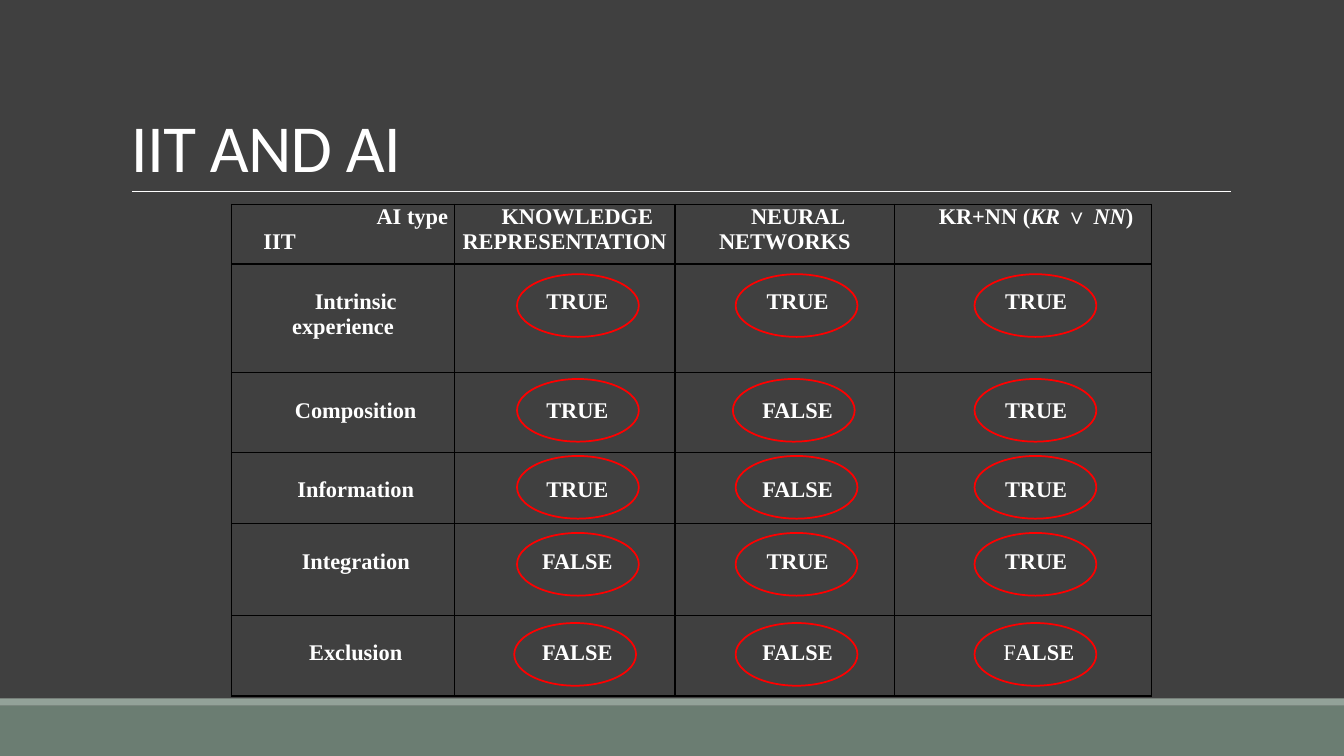
from dataclasses import dataclass
from itertools import product
from typing import NamedTuple

from lxml.etree import SubElement
from pptx import Presentation
from pptx.dml.color import RGBColor
from pptx.enum.shapes import MSO_CONNECTOR as Connector, MSO_SHAPE as Shape
from pptx.enum.text import MSO_ANCHOR as Anchor, PP_ALIGN as Align
from pptx.oxml import parse_xml
from pptx.oxml.ns import nsdecls, qn
from pptx.util import Cm, Pt


@dataclass(frozen=True)
class Theme:
    background: str = "404040"
    footer: str = "6B7D72"
    stripe: str = "93A299"
    text: str = "FFFFFF"
    border: str = "000000"
    ring: str = "FF0000"
    title_font: str = "Calibri"
    table_font: str = "Times New Roman"
    title_size: float = 48
    table_size: float = 16


class Span(NamedTuple):
    text: str
    bold: bool = True
    italic: bool = False


class Line(NamedTuple):
    spans: list[Span]
    align: Align = Align.CENTER


class Property(NamedTuple):
    name: str
    height: float
    ring_top: float
    verdicts: list[list[Span]]


class Band(NamedTuple):
    top: float
    height: float
    color: str


THEME = Theme()
WIDTH, HEIGHT = 33.87, 19.05
TABLE_LEFT, TABLE_TOP, HEADER_HEIGHT = 5.84, 5.15, 1.5
COLUMN_WIDTHS = [5.61, 5.56, 5.54, 6.48]
CELL_INSET, FIRST_INDENT, BLANK_LINE = 0.16, 0.64, 0.64
RING_LEFTS, RING_WIDTH, RING_HEIGHT = [13.03, 18.54, 24.56], 3.07, 1.58
RING_SHIFTS = {("Composition", 1): -0.07, ("Exclusion", 0): -0.07}
BANDS = [Band(17.78, 1.27, THEME.footer), Band(17.6, 0.18, THEME.stripe)]
TRUE, FALSE = [Span("TRUE")], [Span("FALSE")]

HEADERS = [
    [Line([Span("AI type")], Align.RIGHT), Line([Span("IIT")], Align.LEFT)],
    [Line([Span("KNOWLEDGE REPRESENTATION")])],
    [Line([Span("NEURAL NETWORKS")])],
    [Line([Span("KR+NN ("), Span("KR ", italic=True), Span("∨ "),
           Span("NN", italic=True), Span(")")])],
]
PROPERTIES = [
    Property("Intrinsic experience", 2.74, 6.91, [TRUE, TRUE, TRUE]),
    Property("Composition", 2.01, 9.55, [TRUE, FALSE, TRUE]),
    Property("Information", 1.8, 11.49, [TRUE, FALSE, TRUE]),
    Property("Integration", 2.31, 13.43, [FALSE, TRUE, TRUE]),
    Property("Exclusion", 2.03, 15.7,
             [FALSE, FALSE, [Span(" F", bold=False), Span("ALSE")]]),
]


def rgb(color: str) -> RGBColor:
    """Turn a hex string into a colour."""
    return RGBColor.from_string(color)


def style_run(r, font: str, size: float) -> None:
    """Set the font, size and colour of a run."""
    r.font.name, r.font.size = font, Pt(size)
    r.font.color.rgb = rgb(THEME.text)


def add_band(s, band: Band) -> None:
    """Draw a full-width band at the foot of the slide."""
    sp = s.shapes.add_shape(Shape.RECTANGLE, 0, Cm(band.top), Cm(WIDTH), Cm(band.height))
    sp.shadow.inherit = False
    sp.fill.solid()
    sp.fill.fore_color.rgb = rgb(band.color)
    sp.line.fill.background()


def add_title(s, text: str) -> None:
    """Draw the title and the rule under it."""
    rule = s.shapes.add_connector(Connector.STRAIGHT, Cm(3.33), Cm(4.83), Cm(31.01), Cm(4.83))
    rule.line.color.rgb, rule.line.width = rgb(THEME.text), Pt(0.5)
    SubElement(rule._element.spPr, qn("a:effectLst"))
    tf = s.shapes.add_textbox(Cm(3.05), Cm(0.79), Cm(27.94), Cm(4.04)).text_frame
    tf.word_wrap, tf.vertical_anchor = True, Anchor.BOTTOM
    p = tf.paragraphs[0]
    p.line_spacing = 0.85
    r = p.add_run()
    r.text = text
    style_run(r, THEME.title_font, THEME.title_size)
    r._r.get_or_add_rPr().set("spc", "-50")


def add_borders(cell) -> None:
    """Give a cell a thin line on all four sides."""
    tc_pr = cell._tc.get_or_add_tcPr()
    for index, side in enumerate(("lnL", "lnR", "lnT", "lnB")):
        tc_pr.insert(index, parse_xml(
            f'<a:{side} {nsdecls("a")} w="{Pt(1)}"><a:solidFill>'
            f'<a:srgbClr val="{THEME.border}"/></a:solidFill></a:{side}>'))


def fill_cell(cell, lines: list[Line], top: float = 0) -> None:
    """Write lines of styled spans into a cell."""
    cell.margin_left = cell.margin_right = Cm(CELL_INSET)
    cell.margin_top, cell.margin_bottom = Cm(top), 0
    cell.fill.background()
    add_borders(cell)
    tf = cell.text_frame
    for index, line in enumerate(lines):
        p = tf.add_paragraph() if index else tf.paragraphs[0]
        p.alignment = line.align
        p._p.get_or_add_pPr().set("indent", str(Cm(FIRST_INDENT)))
        for span in line.spans:
            r = p.add_run()
            r.text = span.text
            r.font.bold, r.font.italic = span.bold, span.italic
            style_run(r, THEME.table_font, THEME.table_size)


def add_comparison(s) -> None:
    """Draw the table of properties against AI types."""
    heights = [HEADER_HEIGHT] + [prop.height for prop in PROPERTIES]
    table = s.shapes.add_table(
        len(heights), len(COLUMN_WIDTHS), Cm(TABLE_LEFT), Cm(TABLE_TOP),
        Cm(sum(COLUMN_WIDTHS)), Cm(sum(heights))).table
    table.first_row = table.horz_banding = False
    for column, width in zip(table.columns, COLUMN_WIDTHS):
        column.width = Cm(width)
    for row, height in zip(table.rows, heights):
        row.height = Cm(height)
    for column, lines in enumerate(HEADERS):
        fill_cell(table.cell(0, column), lines)
    for row, prop in enumerate(PROPERTIES, 1):
        for column, spans in enumerate([[Span(prop.name)], *prop.verdicts]):
            fill_cell(table.cell(row, column), [Line(spans)], BLANK_LINE)


def add_ring(s, left: float, top: float) -> None:
    """Draw a ring around a verdict."""
    sp = s.shapes.add_shape(Shape.OVAL, Cm(left), Cm(top), Cm(RING_WIDTH), Cm(RING_HEIGHT))
    sp.shadow.inherit = False
    sp.fill.background()
    sp.line.color.rgb, sp.line.width = rgb(THEME.ring), Pt(1.25)


def main() -> None:
    """Build and save the slide."""
    prs = Presentation()
    prs.slide_width, prs.slide_height = Cm(WIDTH), Cm(HEIGHT)
    s = prs.slides.add_slide(prs.slide_layouts[6])
    s.background.fill.solid()
    s.background.fill.fore_color.rgb = rgb(THEME.background)
    for band in BANDS:
        add_band(s, band)
    add_title(s, "IIT AND AI")
    add_comparison(s)
    for prop, (column, left) in product(PROPERTIES, enumerate(RING_LEFTS)):
        add_ring(s, left + RING_SHIFTS.get((prop.name, column), 0), prop.ring_top)
    prs.save("out.pptx")


if __name__ == "__main__":
    main()
